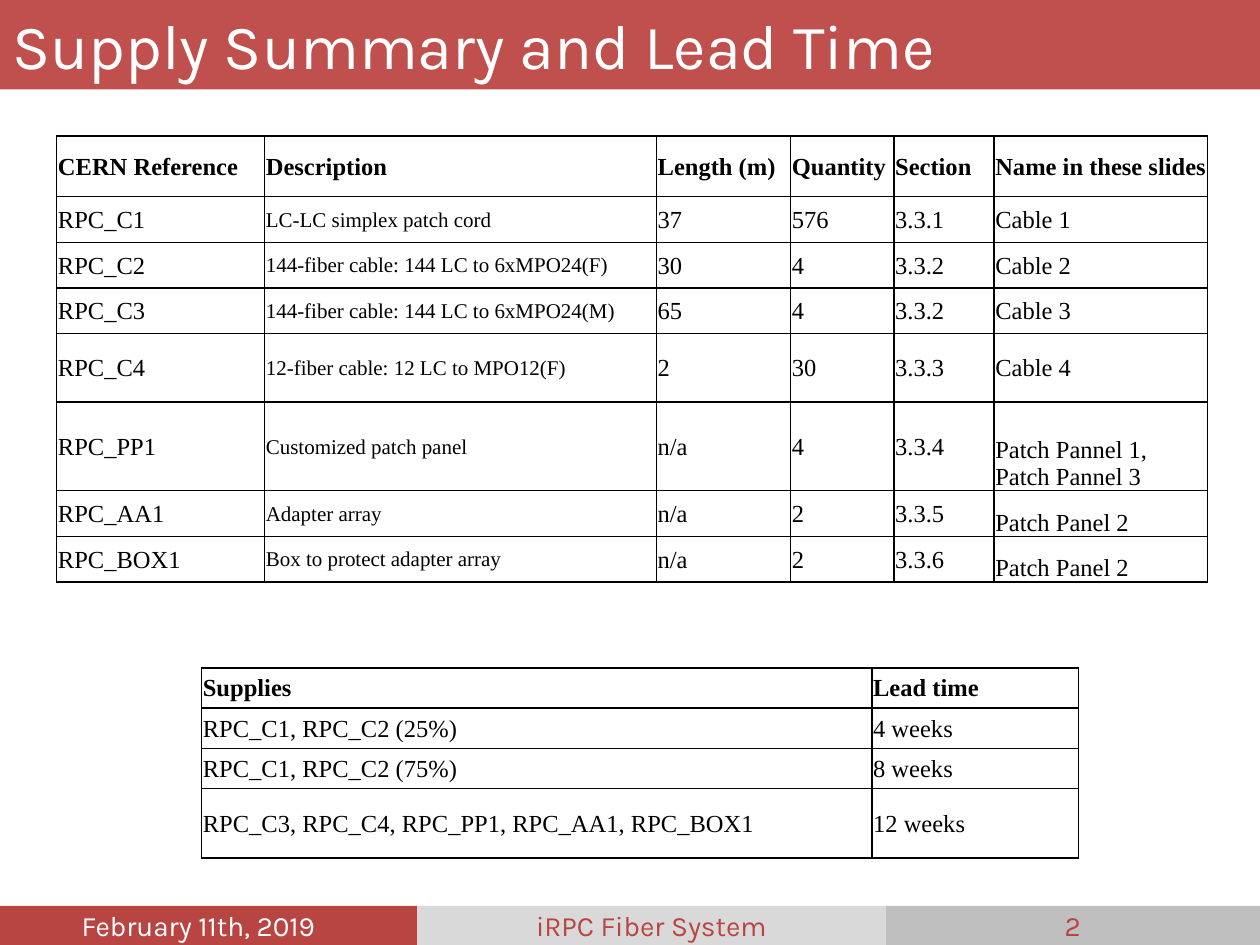
from lxml import etree
from pptx import Presentation
from pptx import util as u
from pptx.dml.color import RGBColor
from pptx.enum import shapes, text
from pptx.oxml import ns

deck = Presentation()
deck.slide_width, deck.slide_height = u.Inches(10), u.Inches(7.5)
slide = deck.slides.add_slide(deck.slide_layouts[6])
unit = deck.slide_width / 100  # square grid: 100 columns by 75 rows
LEFT, JUST = text.PP_ALIGN.LEFT, text.PP_ALIGN.JUSTIFY
MID, LOW = text.MSO_ANCHOR.MIDDLE, text.MSO_ANCHOR.BOTTOM


def style(part, font, size, ink, bold=False):
    part.font.name, part.font.size, part.font.bold = font, u.Pt(size), bold
    part.font.color.rgb = RGBColor.from_string(ink)


def grid(left, top, cols, rows, data):
    """Add a ruled table with a bold first row and return it."""
    box = [round(n * unit) for n in (left, top, sum(cols), sum(rows))]
    table = slide.shapes.add_table(len(rows), len(cols), *box).table
    table.first_row = table.horz_banding = False
    for col, wide in zip(table.columns, cols):
        col.width = round(wide * unit)
    for r, (row, high) in enumerate(zip(table.rows, rows)):
        row.height = round(high * unit)
        for cell, words in zip(row.cells, data[r]):
            cell.text = words
            cell.vertical_anchor = MID
            cell.margin_left = cell.margin_right = cell.margin_top = u.Inches(0.01)
            cell.margin_bottom = 0
            para = cell.text_frame.paragraphs[0]
            para.alignment = JUST
            style(para, "Times New Roman", 14, "000000", r == 0)
            props = cell._tc.get_or_add_tcPr()
            for side in ("a:lnL", "a:lnR", "a:lnT", "a:lnB"):
                line = etree.SubElement(props, ns.qn(side), w=str(u.Pt(1)))
                fill = etree.SubElement(line, ns.qn("a:solidFill"))
                etree.SubElement(fill, ns.qn("a:srgbClr"), val="000000")
            cell.fill.background()
    return table


# Title bar and footer: left, top, width, height, fill, ink, size, words
foot = 71.9, 3.1
bars = [
    (0, 0, 100, 7.1, "C0504D", "FFFFFF", 36, "Supply Summary and Lead Time"),
    (0, foot[0], 33.1, foot[1], "B94543", "FFFFFF", 16, "February 11th, 2019"),
    (33.1, foot[0], 37.2, foot[1], "D9D9D9", "B94543", 16, "iRPC Fiber System"),
    (70.3, foot[0], 29.7, foot[1], "BFBFBF", "B94543", 16, "2"),
]
for *box, back, ink, size, words in bars:
    bar = slide.shapes.add_shape(
        shapes.MSO_SHAPE.RECTANGLE, *[round(n * unit) for n in box])
    bar.shadow.inherit = False
    bar.fill.solid()
    bar.fill.fore_color.rgb = RGBColor.from_string(back)
    bar.line.fill.background()
    frame = bar.text_frame
    frame.word_wrap = True
    frame.text = words
    head = box[1] == 0
    frame.vertical_anchor = text.MSO_ANCHOR.TOP if head else MID
    para = frame.paragraphs[0]
    para.alignment = LEFT if head else text.PP_ALIGN.CENTER
    style(para, "Karla", size, ink)
    if words.startswith("February"):
        frame.margin_right = u.Inches(0.26)  # sets the date left of centre

supply = [
    ("CERN Reference", "Description", "Length (m)", "Quantity", "Section",
     "Name in these slides"),
    ("RPC_C1", "LC-LC simplex patch cord", "37", "576", "3.3.1", "Cable 1"),
    ("RPC_C2", "144-fiber cable: 144 LC to 6xMPO24(F)", "30", "4", "3.3.2", "Cable 2"),
    ("RPC_C3", "144-fiber cable: 144 LC to 6xMPO24(M)", "65", "4", "3.3.2", "Cable 3"),
    ("RPC_C4", "12-fiber cable: 12 LC to MPO12(F)", "2", "30", "3.3.3", "Cable 4"),
    ("RPC_PP1", "Customized patch panel", "n/a", "4", "3.3.4",
     "Patch Pannel 1, Patch Pannel 3"),
    ("RPC_AA1", "Adapter array", "n/a", "2", "3.3.5", "Patch Panel 2"),
    ("RPC_BOX1", "Box to protect adapter array", "n/a", "2", "3.3.6", "Patch Panel 2"),
]
parts = grid(4.5, 10.8, [16.5, 31.1, 10.65, 8.2, 7.95, 16.95],
             [4.8, 3.63, 3.63, 3.63, 5.43, 7.02, 3.63, 3.63], supply)
for r in range(1, len(supply)):
    parts.cell(r, 1).text_frame.paragraphs[0].font.size = u.Pt(12)
    if supply[r][5].startswith("Patch"):
        name = parts.cell(r, 5)
        name.vertical_anchor = LOW
        name.text_frame.paragraphs[0].alignment = LEFT

grid(16, 53, [53.2, 16.4], [3.2, 3.2, 3.2, 5.5], [
    ("Supplies", "Lead time"),
    ("RPC_C1, RPC_C2 (25%)", "4 weeks"),
    ("RPC_C1, RPC_C2 (75%)", "8 weeks"),
    ("RPC_C3, RPC_C4, RPC_PP1, RPC_AA1, RPC_BOX1", "12 weeks"),
])

deck.save("out.pptx")
